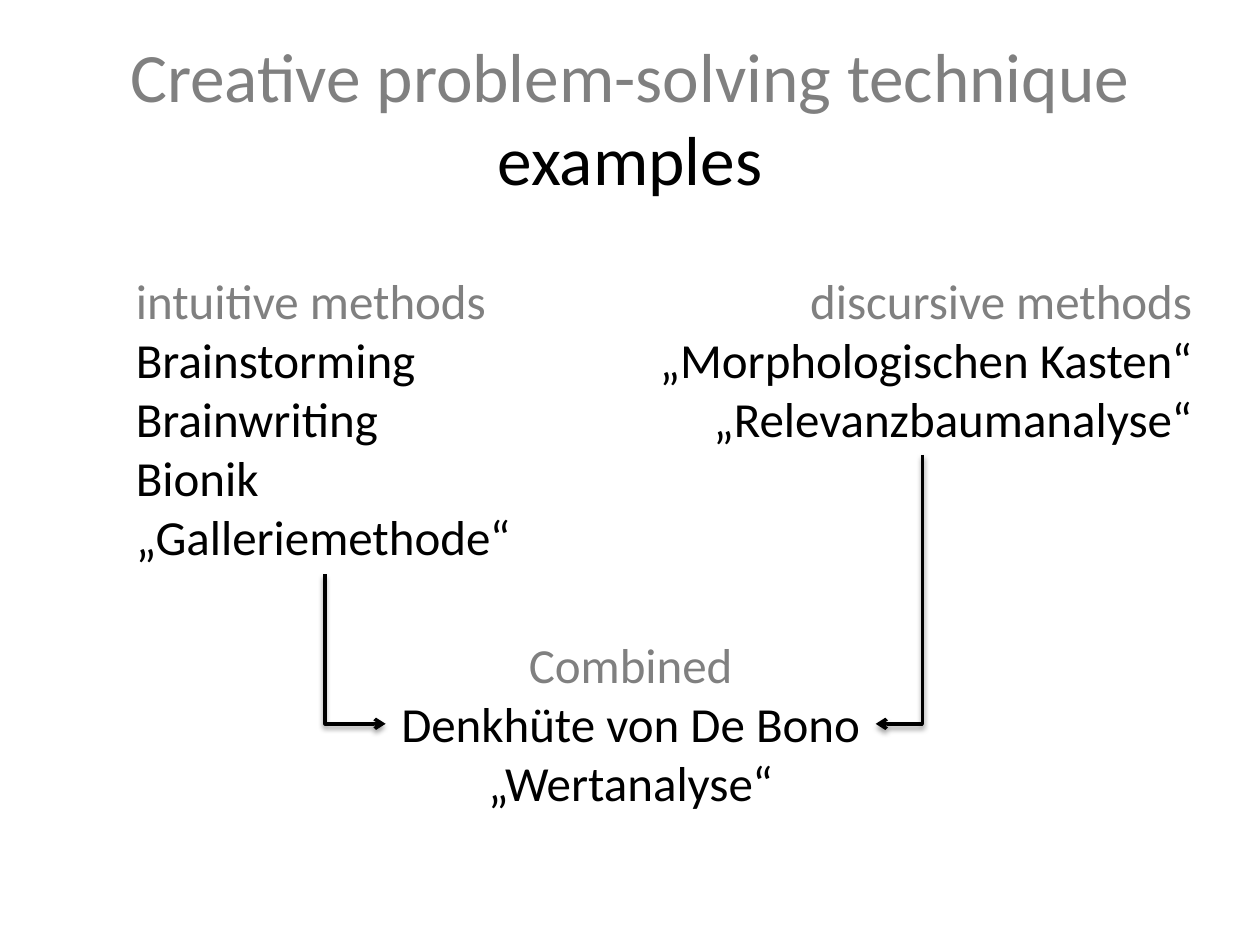
"""Build a slide that joins two groups of creative methods into a combined one."""
from lxml.etree import SubElement
from pptx import Presentation
from pptx.dml.color import RGBColor
from pptx.enum.dml import MSO_THEME_COLOR
from pptx.enum.shapes import MSO_CONNECTOR
from pptx.enum.text import MSO_ANCHOR, MSO_AUTO_SIZE, PP_ALIGN
from pptx.oxml.ns import qn
from pptx.util import Inches, Pt

THEME = {
    "font": "Calibri",
    "grey": RGBColor(0x80, 0x80, 0x80),
    "black": RGBColor(0, 0, 0),
    "title": Pt(39.6),
    "body": Pt(28),
    "line": Pt(2),
}

deck = Presentation()
deck.slide_width, deck.slide_height = Inches(10), Inches(7.5)
COL, ROW = deck.slide_width / 100, deck.slide_height / 75
slide = deck.slides.add_slide(deck.slide_layouts[6])


def write(lines, area, size="body", align=PP_ALIGN.LEFT, anchor=MSO_ANCHOR.TOP,
          wrap=False, fit=MSO_AUTO_SIZE.SHAPE_TO_FIT_TEXT, soft=False):
    """Add a text box whose first line is grey and whose other lines are black."""
    left, top, wide, high = area
    box = slide.shapes.add_textbox(int(left * COL), int(top * ROW),
                                   int(wide * COL), int(high * ROW))
    frame = box.text_frame
    frame.word_wrap, frame.auto_size, frame.vertical_anchor = wrap, fit, anchor
    para = frame.paragraphs[0]
    for index, line in enumerate(lines):
        if index and soft:
            para.add_line_break()
        elif index:
            para = frame.add_paragraph()
        para.alignment = align
        run = para.add_run()
        run.text = line
        run.font.name, run.font.size = THEME["font"], THEME[size]
        run.font.color.rgb = THEME["black" if index else "grey"]
    return box


write(["Creative problem-solving technique", "examples"], (5, 3, 90, 12.5),
      size="title", align=PP_ALIGN.CENTER, anchor=MSO_ANCHOR.MIDDLE,
      wrap=True, fit=MSO_AUTO_SIZE.NONE, soft=True)
left = write(["intuitive methods", "Brainstorming", "Brainwriting", "Bionik",
              "„Galleriemethode“"], (9.8, 21, 32, 24.6))
right = write(["discursive methods", "„Morphologischen Kasten“",
               "„Relevanzbaumanalyse“"], (50.8, 21, 44.8, 15.1),
              align=PP_ALIGN.RIGHT)
mix = write(["Combined", "Denkhüte von De Bono", "„Wertanalyse“"],
            (30.6, 49.9, 38.9, 15.1), align=PP_ALIGN.CENTER)

for box, side, turn, flip in ((left, 1, 270, "1"), (right, 3, 90, "0")):
    link = slide.shapes.add_connector(MSO_CONNECTOR.ELBOW, 0, 0, 0, 0)
    link.begin_connect(box, 2)
    link.end_connect(mix, side)
    midx = (link.begin_x + link.end_x) // 2
    midy = (link.begin_y + link.end_y) // 2
    wide, high = abs(link.end_y - link.begin_y), abs(link.end_x - link.begin_x)
    link.left, link.top = midx - wide // 2, midy - high // 2
    link.width, link.height = wide, high
    link.line.color.rgb, link.line.width = THEME["black"], THEME["line"]
    props = link._element.spPr
    frame = props.find(qn("a:xfrm"))
    for name, value in (("rot", str(turn * 60000)), ("flipH", flip), ("flipV", "0")):
        frame.set(name, value)
    props.find(qn("a:prstGeom")).set("prst", "bentConnector2")
    SubElement(props.find(qn("a:ln")), qn("a:tailEnd"), type="arrow")
    glow = SubElement(SubElement(props, qn("a:effectLst")), qn("a:outerShdw"),
                      blurRad=str(Pt(3.1)), dist=str(Pt(1.6)),
                      dir="5400000", rotWithShape="0")
    tint = SubElement(glow, qn("a:srgbClr"), val=str(THEME["black"]))
    SubElement(tint, qn("a:alpha"), val="38000")

deck.save("out.pptx")
